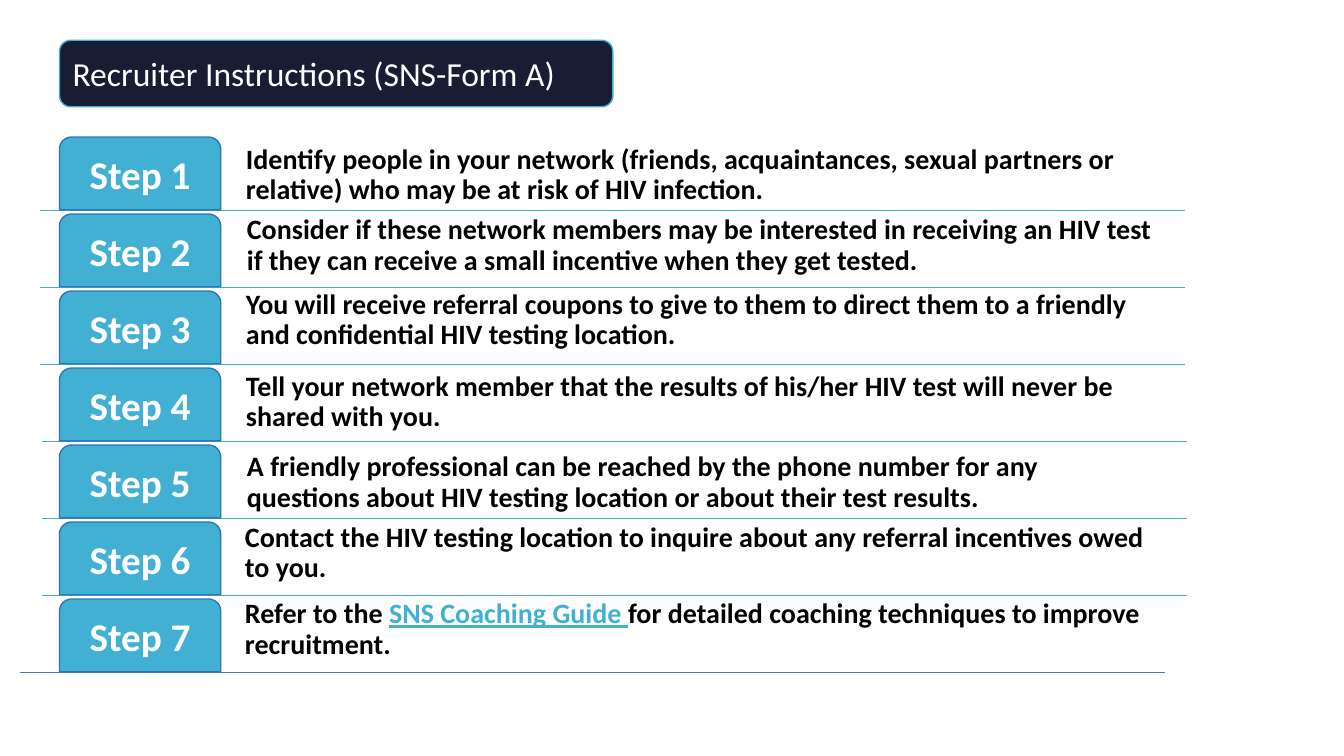
import dataclasses

import pptx
import pptx.dml.color
import pptx.enum.shapes
import pptx.enum.text
import pptx.util
from pptx.oxml.ns import qn
import lxml.etree

Pt = pptx.util.Pt
Shapes = pptx.enum.shapes.MSO_SHAPE
Anchor = pptx.enum.text.MSO_ANCHOR
Align = pptx.enum.text.PP_ALIGN


@dataclasses.dataclass(frozen=True)
class Theme:
    """Colours, font and type sizes of the slide."""
    accent: str = "42B0D2"
    navy: str = "191D34"
    tab_edge: str = "2E75B6"
    last_rule: str = "497CAB"
    white: str = "FFFFFF"
    black: str = "000000"
    font: str = "Calibri"
    title_size: int = 24
    tab_size: int = 28
    body_size: int = 20


@dataclasses.dataclass(frozen=True)
class Box:
    """A rectangle in points."""
    left: float
    top: float
    width: float
    height: float

    def lengths(self):
        """Return the four sides as slide lengths."""
        return [Pt(side) for side in (self.left, self.top, self.width, self.height)]


@dataclasses.dataclass(frozen=True)
class Step:
    """Wording of one step, with its text box and rule start relative to the row."""
    spans: tuple
    text_box: Box
    rule_left: float


THEME = Theme()
TITLE = "Recruiter Instructions (SNS-Form A)"
LINK = "SNS Coaching Guide "
TITLE_BOX = Box(42.5, 28.8, 395.3, 47.5)
FIRST_ROW = Box(42.5, 97.9, 115.2, 52)
ROW_PITCH = 55
RULE_DROP = 52.6
RULE_WIDTH = 817.4
STEPS = (
    Step(("Identify people in your network (friends, acquaintances, sexual partners or "
          "relative) who may be at risk of HIV infection.",),
         Box(130.3, 0, 658, 51.9), -13.7),
    Step(("Consider if these network members may be interested in receiving an HIV test "
          "if they can receive a small incentive when they get tested.",),
         Box(131, 4.8, 657.4, 42.5), -13.7),
    Step(("You will receive referral coupons to give to them to direct them to a friendly "
          "and confidential HIV testing location.",),
         Box(130.3, 5.9, 658, 39.6), -13.7),
    Step(("Tell your network member that the results of his/her HIV test will never be "
          "shared with you.",),
         Box(130.3, 1.4, 653.8, 47.5), -12.3),
    Step(("A friendly professional can be reached by the phone number for any "
          "questions about HIV testing location or about their test results.",),
         Box(131, 1.1, 651.6, 50.4), -12.3),
    Step(("Contact the HIV testing location to inquire about any referral incentives owed "
          "to you.",),
         Box(129.6, 5.1, 653.8, 41.8), -12.3),
    Step(("Refer to the ", LINK,
          "for detailed coaching techniques to improve recruitment."),
         Box(129.6, 5.6, 715.7, 41), -28.1),
)


def rgb(code):
    """Turn a hex code into a colour."""
    return pptx.dml.color.RGBColor.from_string(code)


def write_text(shape, spans, size, color, anchor, inset, bold=True, align=Align.LEFT, spacing=0.9):
    """Write one paragraph into a shape."""
    frame = shape.text_frame
    frame.word_wrap = True
    frame.vertical_anchor = anchor
    frame.margin_left = frame.margin_right = Pt(inset[0])
    frame.margin_top = frame.margin_bottom = Pt(inset[1])
    para = frame.paragraphs[0]
    para.alignment = align
    para.line_spacing = spacing
    para.font.name = THEME.font
    para.font.size = Pt(size)
    para.font.bold = bold
    para.font.color.rgb = rgb(color)
    for words in spans:
        span = para.add_run()
        span.text = words
        if words == LINK:
            span.font.underline = True
            span.font.color.rgb = rgb(THEME.accent)


def add_panel(page, kind, box, fill, edge):
    """Add a filled shape with a thin edge."""
    panel = page.shapes.add_shape(kind, *box.lengths())
    panel.shadow.inherit = False
    panel.fill.solid()
    panel.fill.fore_color.rgb = rgb(fill)
    panel.line.color.rgb = rgb(edge)
    panel.line.width = Pt(1)
    return panel


def add_rule(page, left, top, width, color):
    """Add a horizontal rule."""
    rule = page.shapes.add_connector(
        pptx.enum.shapes.MSO_CONNECTOR.STRAIGHT, Pt(left), Pt(top), Pt(left + width), Pt(top))
    rule.line.color.rgb = rgb(color)
    rule.line.width = Pt(1)
    lxml.etree.SubElement(rule._element.spPr, qn("a:effectLst"))


def add_title(page, box):
    """Add the title banner."""
    banner = add_panel(page, Shapes.ROUNDED_RECTANGLE, box, THEME.navy, THEME.accent)
    write_text(banner, (TITLE,), THEME.title_size, THEME.white, Anchor.MIDDLE, (7.2, 3.6),
               bold=False, spacing=1.0)


def add_step(page, box, number, step, rule_color):
    """Add one row: rule, instruction and numbered tab."""
    add_rule(page, box.left + step.rule_left, box.top + RULE_DROP, RULE_WIDTH, rule_color)
    place = dataclasses.replace(
        step.text_box, left=box.left + step.text_box.left, top=box.top + step.text_box.top)
    words = page.shapes.add_textbox(*place.lengths())
    write_text(words, step.spans, THEME.body_size, THEME.black, Anchor.BOTTOM, (2.9, 2.9))
    tab = add_panel(page, Shapes.ROUND_2_SAME_RECTANGLE, box, THEME.accent, THEME.tab_edge)
    write_text(tab, (f"Step {number}",), THEME.tab_size, THEME.white, Anchor.MIDDLE, (4.3, 4.3),
               align=Align.CENTER)
    tab.text_frame.margin_top = Pt(6.8)


def add_steps(page, first_row):
    """Stack the steps at an equal pitch."""
    for index, step in enumerate(STEPS):
        row = dataclasses.replace(first_row, top=first_row.top + index * ROW_PITCH)
        is_last = index == len(STEPS) - 1
        add_step(page, row, index + 1, step, THEME.last_rule if is_last else THEME.accent)


def main():
    """Build and save the slide."""
    deck = pptx.Presentation()
    deck.slide_width, deck.slide_height = Pt(960), Pt(540)
    page = deck.slides.add_slide(deck.slide_layouts[6])
    add_steps(page, FIRST_ROW)
    add_title(page, TITLE_BOX)
    deck.save("out.pptx")


if __name__ == "__main__":
    main()
